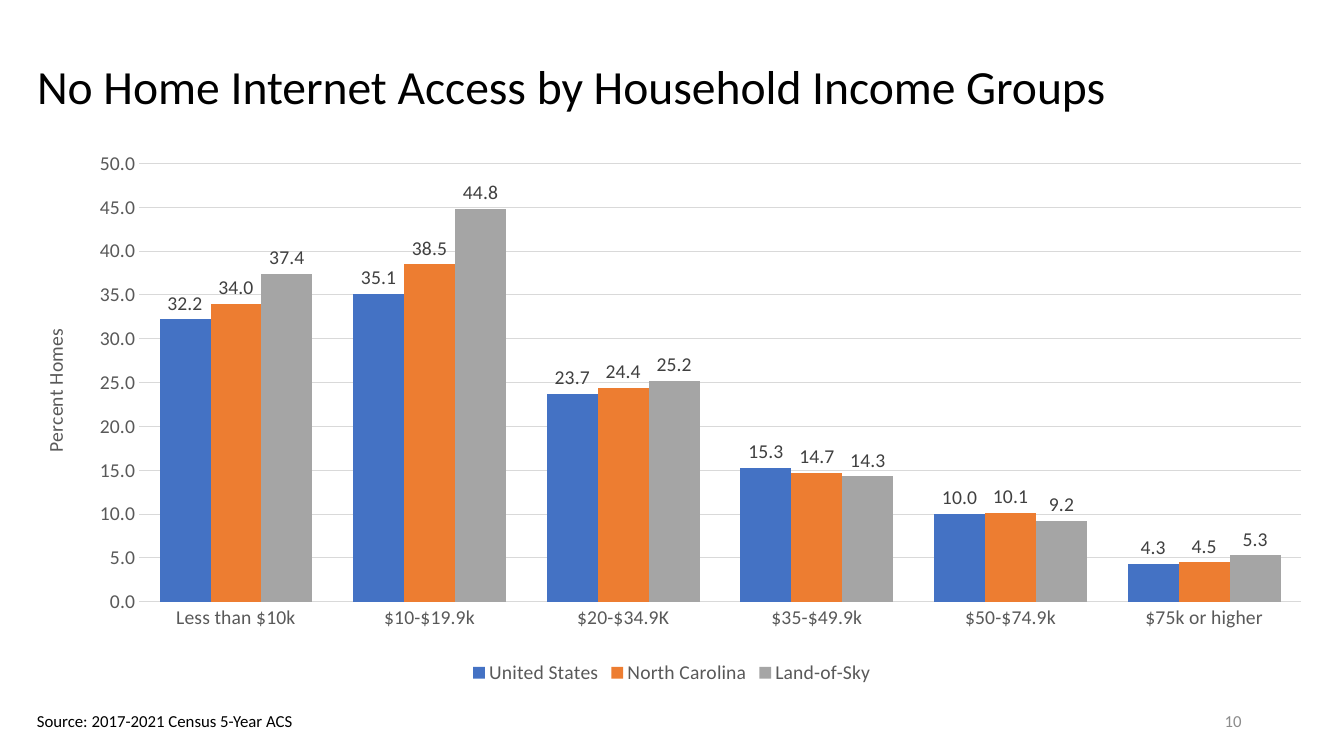
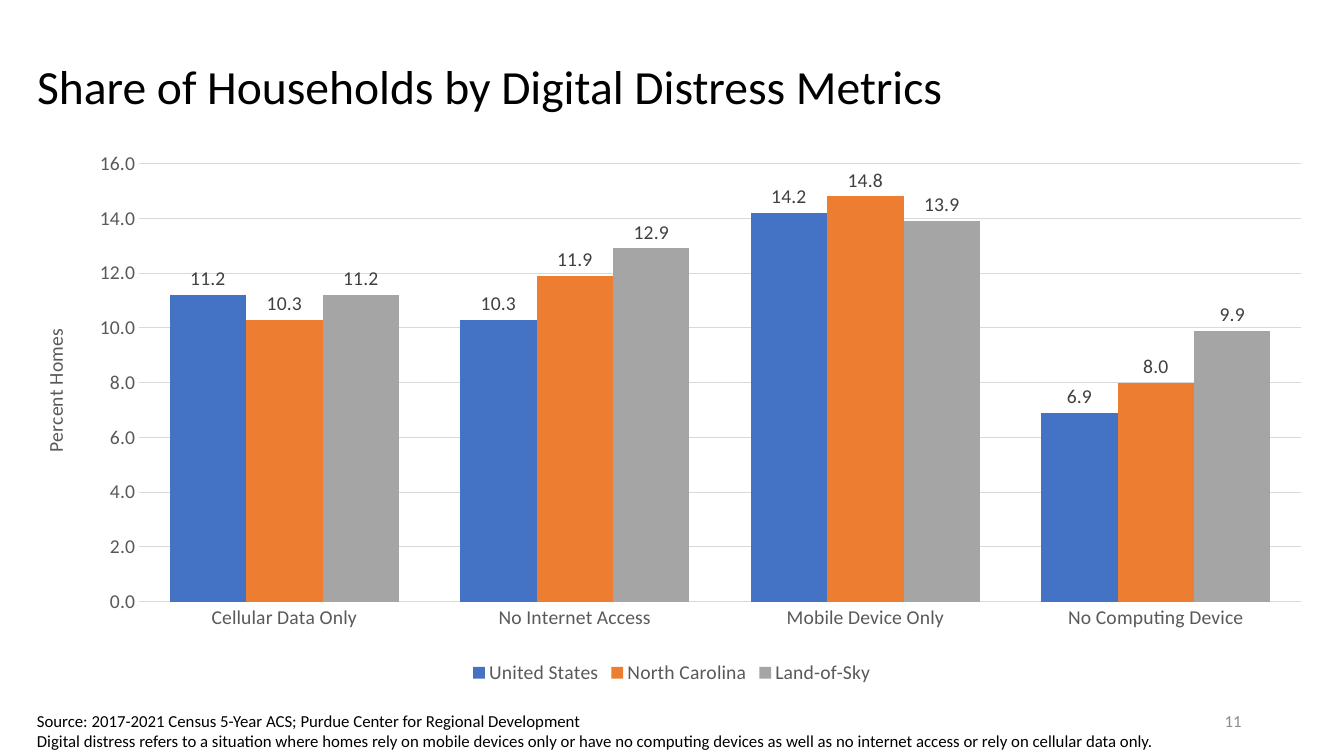
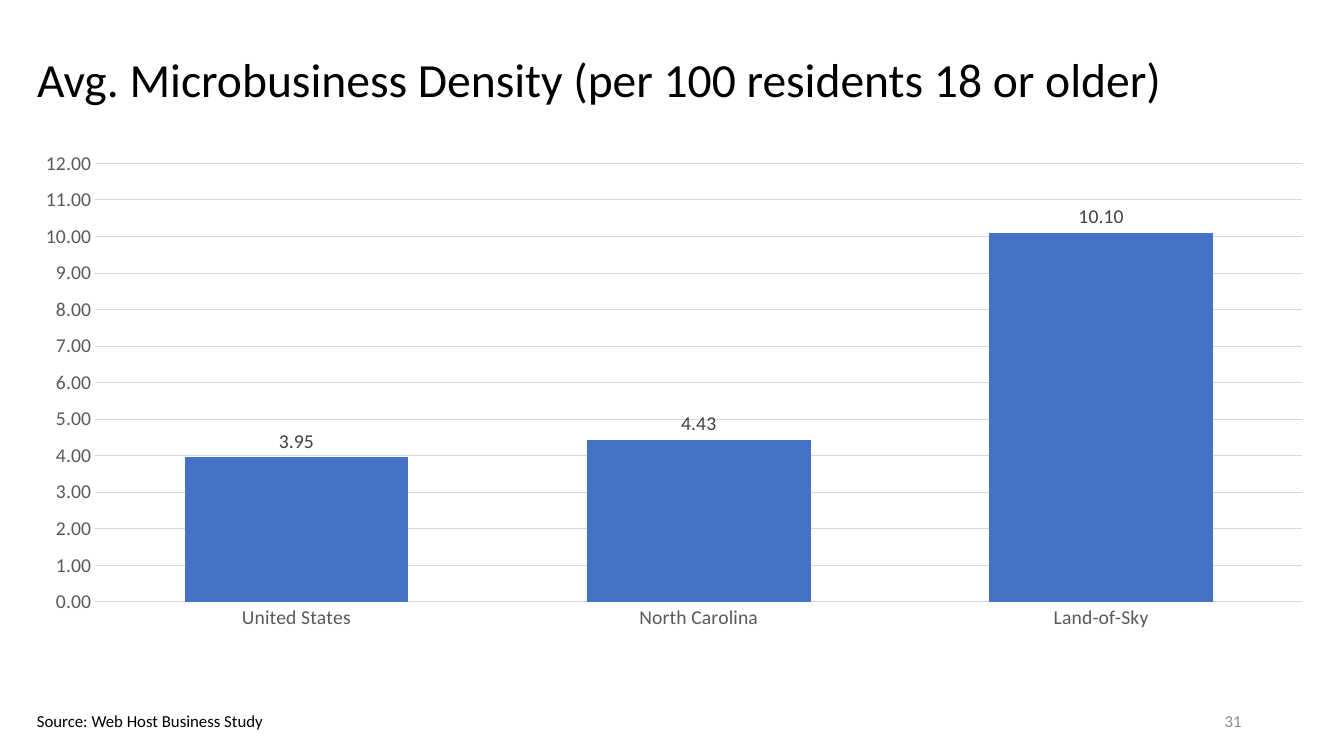
import dataclasses

import lxml.etree
import pptx
import pptx.chart.data
import pptx.dml.color
import pptx.enum.chart
import pptx.enum.text
import pptx.oxml.ns
import pptx.util

Cm = pptx.util.Cm
Pt = pptx.util.Pt
RGBColor = pptx.dml.color.RGBColor

# Shared style
FONT = "Calibri"
BLACK = RGBColor(0x00, 0x00, 0x00)
AXIS_GRAY = RGBColor(0x59, 0x59, 0x59)
LABEL_GRAY = RGBColor(0x40, 0x40, 0x40)
NUMBER_GRAY = RGBColor(0x8C, 0x8C, 0x8C)
GRID_GRAY = RGBColor(0xD9, 0xD9, 0xD9)
SERIES_COLORS = (
    RGBColor(0x44, 0x72, 0xC4),
    RGBColor(0xED, 0x7D, 0x31),
    RGBColor(0xA5, 0xA5, 0xA5),
)
REGIONS = ("United States", "North Carolina", "Land-of-Sky")

# Shared regions: left, top, width, height
MARGIN = Cm(0.68)
TITLE_BOX = (MARGIN, Cm(0.86), Cm(32.41), Cm(2.77))
HIGH_TITLE_BOX = (MARGIN, Cm(0.5), Cm(32.41), Cm(3.15))
CHART_BOX = (MARGIN, Cm(3.64), Cm(32.5), Cm(13.72))
NUMBER_BOX = (Cm(23.92), Cm(17.65), Cm(7.62), Cm(1.02))
SOURCE_TOP = Cm(17.78)
SOURCE_LINE = Cm(0.51)
SOURCE_PADDING = Cm(0.26)

# Shares of the chart box taken by the plot: x, y, width, height
TITLED_PLOT = (0.087, 0.035, 0.901, 0.805)
PLAIN_PLOT = (0.053, 0.035, 0.936, 0.805)


@dataclasses.dataclass
class ChartSlide:
    title: str
    number: int
    source: str
    source_width: int
    categories: tuple
    series: dict
    top_value: float
    step: float
    number_format: str = "#,##0.0"
    value_title: str = ""
    title_box: tuple = TITLE_BOX
    plot_layout: tuple = TITLED_PLOT


SLIDES = (
    ChartSlide(
        title="No Home Internet Access by Household Income Groups",
        number=10,
        source="Source: 2017-2021 Census 5-Year ACS",
        source_width=Cm(7.06),
        categories=("Less than $10k", "$10-$19.9k", "$20-$34.9K",
                    "$35-$49.9k", "$50-$74.9k", "$75k or higher"),
        series=dict(zip(REGIONS, (
            (32.2, 35.1, 23.7, 15.3, 10, 4.3),
            (34, 38.5, 24.4, 14.7, 10.1, 4.5),
            (37.4, 44.8, 25.2, 14.3, 9.2, 5.3),
        ))),
        top_value=50,
        step=5,
        value_title="Percent Homes",
    ),
    ChartSlide(
        title="Share of Households by Digital Distress Metrics",
        number=11,
        source="Source: 2017-2021 Census 5-Year ACS; Purdue Center for Regional Development\n"
               "Digital distress refers to a situation where homes rely on mobile devices only "
               "or have no computing devices as well as no internet access or rely on "
               "cellular data only.",
        source_width=Cm(28.91),
        categories=("Cellular Data Only", "No Internet Access",
                    "Mobile Device Only", "No Computing Device"),
        series=dict(zip(REGIONS, (
            (11.2, 10.3, 14.2, 6.9),
            (10.3, 11.9, 14.8, 8),
            (11.2, 12.9, 13.9, 9.9),
        ))),
        top_value=16,
        step=2,
        value_title="Percent Homes",
    ),
    ChartSlide(
        title="Avg. Microbusiness Density (per 100 residents 18 or older)",
        number=31,
        source="Source: Web Host Business Study",
        source_width=Cm(6.73),
        categories=REGIONS,
        series={"Series 1": (3.95, 4.43, 10.1)},
        top_value=12,
        step=1,
        number_format="0.00",
        title_box=HIGH_TITLE_BOX,
        plot_layout=PLAIN_PLOT,
    ),
)


def style_font(font, size, color):
    font.name = FONT
    font.size = Pt(size)
    font.bold = False
    font.color.rgb = color


def style_text(frame, size, color, alignment):
    for para in frame.paragraphs:
        para.alignment = alignment
        for span in para.runs:
            style_font(span.font, size, color)


def place_title(page, box, text):
    title = page.shapes.title
    title.left, title.top, title.width, title.height = box
    frame = title.text_frame
    frame.text = text
    frame.auto_size = pptx.enum.text.MSO_AUTO_SIZE.NONE
    frame.vertical_anchor = pptx.enum.text.MSO_ANCHOR.MIDDLE
    frame.paragraphs[0].line_spacing = 0.9
    style_text(frame, 34, BLACK, pptx.enum.text.PP_ALIGN.LEFT)


def place_number(page, box, number):
    frame = page.shapes.add_textbox(*box).text_frame
    frame.word_wrap = True
    frame.vertical_anchor = pptx.enum.text.MSO_ANCHOR.MIDDLE
    frame.text = str(number)
    style_text(frame, 12, NUMBER_GRAY, pptx.enum.text.PP_ALIGN.RIGHT)


def place_source(page, left, top, width, text):
    height = SOURCE_PADDING + SOURCE_LINE * len(text.splitlines())
    frame = page.shapes.add_textbox(left, top, width, height).text_frame
    frame.word_wrap = False
    frame.auto_size = pptx.enum.text.MSO_AUTO_SIZE.SHAPE_TO_FIT_TEXT
    frame.text = text
    style_text(frame, 12, BLACK, pptx.enum.text.PP_ALIGN.LEFT)


def set_plot_layout(chart, shares):
    """Fix the inner plot area to shares of the chart box."""
    qn = pptx.oxml.ns.qn
    plot_area = chart.element.find(".//" + qn("c:plotArea"))
    for old_layout in plot_area.findall(qn("c:layout")):
        plot_area.remove(old_layout)
    layout = lxml.etree.Element(qn("c:layout"))
    manual = lxml.etree.SubElement(layout, qn("c:manualLayout"))
    settings = [("layoutTarget", "inner"), ("xMode", "edge"), ("yMode", "edge")]
    settings += zip("xywh", shares)
    for name, value in settings:
        lxml.etree.SubElement(manual, qn("c:" + name)).set("val", str(value))
    plot_area.insert(0, layout)


def style_axes(chart, content):
    for axis in (chart.category_axis, chart.value_axis):
        axis.major_tick_mark = pptx.enum.chart.XL_TICK_MARK.NONE
        axis.minor_tick_mark = pptx.enum.chart.XL_TICK_MARK.NONE
        style_font(axis.tick_labels.font, 14, AXIS_GRAY)

    values = chart.value_axis
    values.minimum_scale = 0
    values.maximum_scale = content.top_value
    values.major_unit = content.step
    values.tick_labels.number_format = content.number_format
    values.tick_labels.number_format_is_linked = False
    values.format.line.fill.background()
    values.has_major_gridlines = True
    for line in (chart.category_axis.format.line, values.major_gridlines.format.line):
        line.color.rgb = GRID_GRAY
        line.width = Pt(0.75)
    if content.value_title:
        frame = values.axis_title.text_frame
        frame.text = content.value_title
        style_text(frame, 14, AXIS_GRAY, pptx.enum.text.PP_ALIGN.CENTER)


def place_chart(page, box, content):
    data = pptx.chart.data.CategoryChartData(number_format=content.number_format)
    data.categories = content.categories
    for name, values in content.series.items():
        data.add_series(name, values)
    chart = page.shapes.add_chart(
        pptx.enum.chart.XL_CHART_TYPE.COLUMN_CLUSTERED, *box, data).chart
    style_font(chart.font, 14, BLACK)
    chart.has_title = False

    # Columns and their labels
    plot = chart.plots[0]
    plot.gap_width = 80
    plot.overlap = 0
    plot.vary_by_categories = False
    for series, color in zip(plot.series, SERIES_COLORS):
        series.format.fill.solid()
        series.format.fill.fore_color.rgb = color
        labels = series.data_labels
        labels.show_value = True
        labels.number_format = content.number_format
        labels.number_format_is_linked = False
        labels.position = pptx.enum.chart.XL_LABEL_POSITION.OUTSIDE_END
        style_font(labels.font, 14, LABEL_GRAY)

    style_axes(chart, content)
    set_plot_layout(chart, content.plot_layout)

    # Legend, where there is more than one series
    chart.has_legend = len(content.series) > 1
    if chart.has_legend:
        chart.legend.position = pptx.enum.chart.XL_LEGEND_POSITION.BOTTOM
        chart.legend.include_in_layout = False
        style_font(chart.legend.font, 14, AXIS_GRAY)


def add_chart_slide(deck, content):
    page = deck.slides.add_slide(deck.slide_layouts.get_by_name("Title Only"))
    place_title(page, content.title_box, content.title)
    place_chart(page, CHART_BOX, content)
    place_number(page, NUMBER_BOX, content.number)
    place_source(page, MARGIN, SOURCE_TOP, content.source_width, content.source)


def main():
    deck = pptx.Presentation()
    deck.slide_width = Cm(33.87)
    deck.slide_height = Cm(19.05)
    for content in SLIDES:
        add_chart_slide(deck, content)
    deck.save("out.pptx")


if __name__ == "__main__":
    main()
